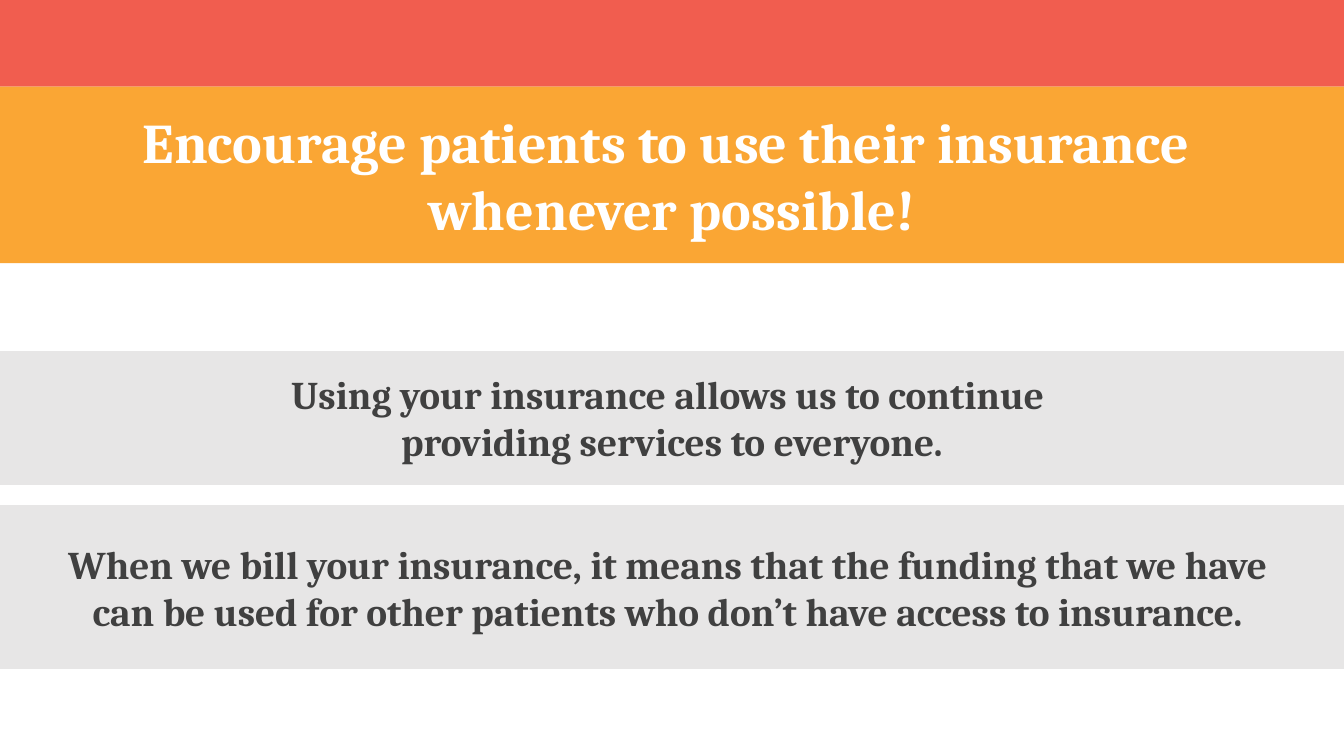
import dataclasses

import pptx
import pptx.dml.color
import pptx.enum.shapes
import pptx.enum.text
import pptx.util

SHAPES = pptx.enum.shapes.MSO_SHAPE


@dataclasses.dataclass(frozen=True)
class Theme:
    font: str = "Cambria"
    coral: str = "F15D4F"
    amber: str = "FAA634"
    grey: str = "E7E6E6"
    white: str = "FFFFFF"
    dark: str = "404040"
    title_size: int = 40
    body_size: int = 28


class Deck:
    ROWS = 75

    def __init__(self, theme):
        self.theme = theme
        self.prs = pptx.Presentation()
        self.prs.slide_width = pptx.util.Inches(13.33)
        self.prs.slide_height = pptx.util.Inches(7.5)
        self.s = self.prs.slides.add_slide(self.prs.slide_layouts[6])

    def rows(self, count):
        return round(self.prs.slide_height * count / self.ROWS)

    def band(self, top, height, fill, kind=SHAPES.RECTANGLE):
        sp = self.s.shapes.add_shape(
            kind, 0, self.rows(top), self.prs.slide_width, self.rows(height)
        )
        sp.shadow.inherit = False
        sp.fill.solid()
        sp.fill.fore_color.rgb = pptx.dml.color.RGBColor.from_string(fill)
        sp.line.fill.background()
        return sp

    def text(self, sp, lines, size, color):
        tf = sp.text_frame
        tf.word_wrap = True
        tf.vertical_anchor = pptx.enum.text.MSO_ANCHOR.MIDDLE
        tf.text = "\n".join(lines)
        for p in tf.paragraphs:
            p.alignment = pptx.enum.text.PP_ALIGN.CENTER
            p.font.name = self.theme.font
            p.font.size = pptx.util.Pt(size)
            p.font.bold = True
            p.font.color.rgb = pptx.dml.color.RGBColor.from_string(color)

    def title(self, top, height, lines):
        sp = self.band(top, height, self.theme.amber)
        self.text(sp, lines, self.theme.title_size, self.theme.white)

    def message(self, top, height, lines):
        sp = self.band(top, height, self.theme.grey, SHAPES.FLOWCHART_PROCESS)
        self.text(sp, lines, self.theme.body_size, self.theme.dark)


def main():
    theme = Theme()
    deck = Deck(theme)
    deck.band(0, 8.6, theme.coral)
    deck.title(8.6, 17.5, [
        "Encourage patients to use their insurance ",
        "whenever possible!",
    ])
    deck.message(34.8, 13.3, [
        "Using your insurance allows us to continue ",
        "providing services to everyone.",
    ])
    deck.message(50.1, 16.3, [
        "When we bill your insurance, it means that the funding that we have ",
        "can be used for other patients who don’t have access to insurance. ",
    ])
    deck.prs.save("out.pptx")


if __name__ == "__main__":
    main()
